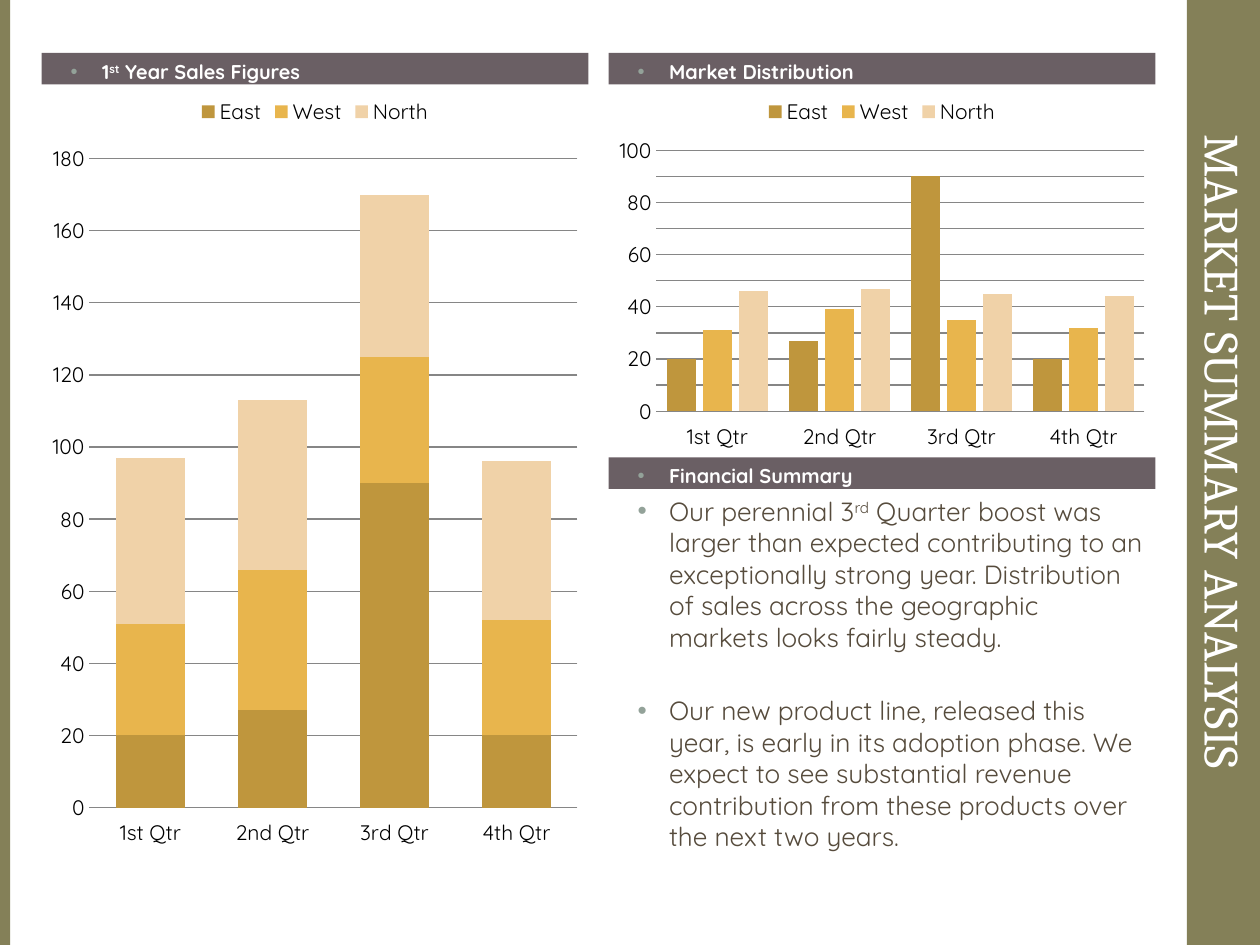
import pptx
import pptx.chart.data
import pptx.dml.color
import pptx.enum.chart
import pptx.enum.shapes
import pptx.enum.text
import pptx.oxml
import pptx.oxml.ns
import pptx.util

RGB = pptx.dml.color.RGBColor
Inches, Pt = pptx.util.Inches, pptx.util.Pt
Chart = pptx.enum.chart
Anchor = pptx.enum.text.MSO_ANCHOR
Align = pptx.enum.text.PP_ALIGN

OLIVE = RGB(0x84, 0x80, 0x58)
PLUM = RGB(0x6A, 0x5F, 0x64)
BROWN = RGB(0x56, 0x4B, 0x3C)
WHITE = RGB(0xFF, 0xFF, 0xFF)
BLACK = RGB(0, 0, 0)
GREY = RGB(0x86, 0x86, 0x86)
GOLD = RGB(0xBF, 0x96, 0x3D)
AMBER = RGB(0xE8, 0xB5, 0x4D)
SAND = RGB(0xF0, 0xD2, 0xA8)
BULLET = "93A299"
FONT = "Quicksand"

# A text is a list of (words, raised) runs
TITLE = "MARKET SUMMARY ANALYSIS"
SALES = [("1", False), ("st", True), (" Year Sales Figures", False)]
MARKET = [("Market Distribution", False)]
FINANCE = [("Financial Summary", False)]
SUMMARY = [
    [("Our perennial 3", False), ("rd", True),
     (" Quarter boost was larger than expected contributing to an exceptionally "
      "strong year. Distribution of sales across the geographic markets looks "
      "fairly steady.", False)],
    [("Our new product line, released this year, is early in its adoption phase. "
      "We expect to see substantial revenue contribution from these products over "
      "the next two years.", False)],
]
QUARTERS = ["1st Qtr", "2nd Qtr", "3rd Qtr", "4th Qtr"]
SERIES = [
    ("East", [20, 27, 90, 20], GOLD),
    ("West", [31, 39, 35, 32], AMBER),
    ("North", [46, 47, 45, 44], SAND),
]

# Two columns; the right one is split into two panels
WIDE, HIGH = 10, 7.5
LEFT, RIGHT, COL = 0.33, 4.83, 4.34
TOP, MID, END, BAR = 0.42, 3.63, 6.84, 0.25
EDGE, BAND = 0.08, 0.58


def place(shape, x, y, w, h):
    shape.left, shape.top = Inches(x), Inches(y)
    shape.width, shape.height = Inches(w), Inches(h)


def add_bullet(para):
    props = para._p.get_or_add_pPr()
    props.set("marL", str(Inches(0.38)))
    props.set("indent", str(Inches(-0.25)))
    space = pptx.oxml.ns.nsdecls("a")
    for xml in (f'<a:buClr {space}><a:srgbClr val="{BULLET}"/></a:buClr>',
                f'<a:buFont {space} typeface="Arial"/>',
                f'<a:buChar {space} char="•"/>'):
        props.append(pptx.oxml.parse_xml(xml))


def fill_text(holder, texts, size, color, bold, gap=0):
    frame = holder.text_frame
    frame.word_wrap = True
    frame.auto_size = pptx.enum.text.MSO_AUTO_SIZE.NONE
    frame.vertical_anchor = Anchor.TOP
    for i, runs in enumerate(texts):
        para = frame.add_paragraph() if i else frame.paragraphs[0]
        para.space_before = Pt(gap if i else 0)
        para.line_spacing = 1.0
        para.font.size, para.font.name = Pt(size), FONT
        para.font.bold, para.font.color.rgb = bold, color
        add_bullet(para)
        for words, raised in runs:
            run = para.add_run()
            run.text = words
            # Run fonts restate the paragraph's, as a placeholder's style wins
            run.font.size, run.font.name = Pt(size), FONT
            run.font.bold, run.font.color.rgb = bold, color
            if raised:
                run.font._element.set("baseline", "30000")


def add_heading(holder, x, y, runs):
    place(holder, x, y, COL, BAR)
    holder.fill.solid()
    holder.fill.fore_color.rgb = PLUM
    fill_text(holder, [runs], 11.4, WHITE, True)


def add_chart(slide, kind, x, bottom, overlap, top, step):
    data = pptx.chart.data.CategoryChartData()
    data.categories = QUARTERS
    for name, values, _ in SERIES:
        data.add_series(name, values)
    y = TOP + BAR
    chart = slide.shapes.add_chart(
        kind, Inches(x), Inches(y), Inches(COL), Inches(bottom - y), data).chart
    chart.has_title = False
    chart.font.size, chart.font.name = Pt(12), FONT
    chart.font.color.rgb = BLACK
    chart.has_legend = True
    chart.legend.position = Chart.XL_LEGEND_POSITION.TOP
    chart.legend.include_in_layout = False
    plot = chart.plots[0]
    plot.gap_width, plot.overlap, plot.vary_by_categories = 75, overlap, False
    for series, (_, _, color) in zip(plot.series, SERIES):
        series.format.fill.solid()
        series.format.fill.fore_color.rgb = color
    cats, vals = chart.category_axis, chart.value_axis
    for axis in (cats, vals):
        axis.major_tick_mark = axis.minor_tick_mark = Chart.XL_TICK_MARK.NONE
    cats.tick_label_position = Chart.XL_TICK_LABEL_POSITION.LOW
    vals.minimum_scale, vals.maximum_scale, vals.major_unit = 0, top, step
    vals.format.line.fill.background()
    vals.has_major_gridlines = True
    for line in (cats.format.line, vals.major_gridlines.format.line):
        line.color.rgb, line.width = GREY, Pt(0.75)


def add_band(slide, x, w):
    band = slide.shapes.add_shape(
        pptx.enum.shapes.MSO_SHAPE.RECTANGLE, Inches(x), 0, Inches(w), Inches(HIGH))
    band.shadow.inherit = False
    band.fill.solid()
    band.fill.fore_color.rgb = OLIVE
    band.line.fill.background()
    return band


def add_title(slide):
    title = slide.shapes.title
    place(title, 6.13, 3.3, 7.17, 0.57)
    title.rotation = 90
    title.text = TITLE
    title.text_frame.vertical_anchor = Anchor.MIDDLE
    para = title.text_frame.paragraphs[0]
    para.alignment = Align.CENTER
    para.font.size, para.font.name = Pt(28), "Cambria"
    para.font.color.rgb = WHITE


def main():
    deck = pptx.Presentation()
    deck.slide_width, deck.slide_height = Inches(WIDE), Inches(HIGH)
    slide = deck.slides.add_slide(deck.slide_layouts[4])
    band = add_band(slide, WIDE - BAND, BAND)
    slide.shapes.title._element.addprevious(band._element)
    add_band(slide, 0, EDGE)
    add_title(slide)
    _, sales, market, finance, body = slide.placeholders
    add_heading(sales, LEFT, TOP, SALES)
    add_heading(market, RIGHT, TOP, MARKET)
    add_heading(finance, RIGHT, MID, FINANCE)
    place(body, RIGHT, MID + BAR, COL, END - MID - BAR)
    fill_text(body, SUMMARY, 15, BROWN, False, gap=24)
    kinds = Chart.XL_CHART_TYPE
    add_chart(slide, kinds.COLUMN_STACKED, LEFT, END, 100, 180, 20)
    add_chart(slide, kinds.COLUMN_CLUSTERED, RIGHT, MID, -25, 100, 10)
    deck.save("out.pptx")


if __name__ == "__main__":
    main()
